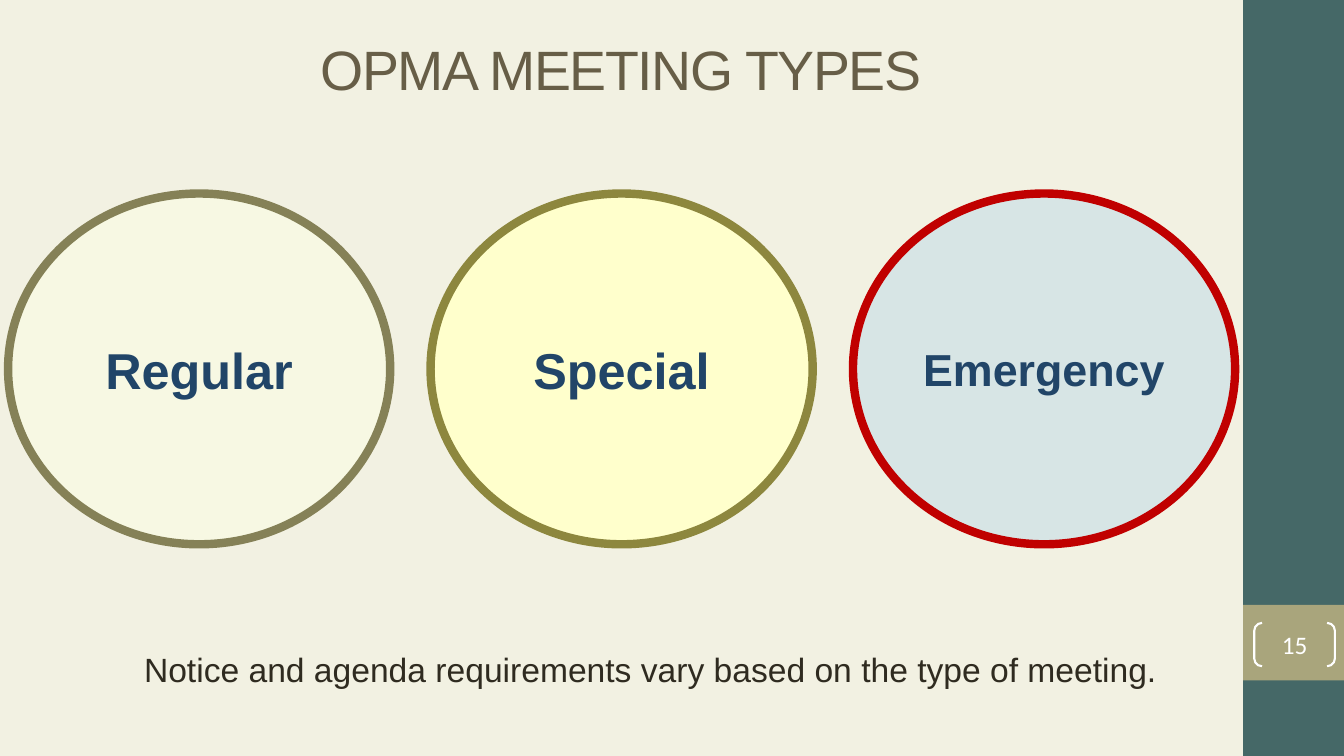
"""Build the slide on OPMA meeting types."""
from dataclasses import dataclass
from typing import Optional

from pptx import Presentation
from pptx import util as u
from pptx.dml.color import RGBColor
from pptx.enum import shapes, text

CREAM = RGBColor(0xF2, 0xF1, 0xE2)
TEAL = RGBColor(0x45, 0x68, 0x67)
KHAKI = RGBColor(0xA9, 0xA5, 0x7C)
BROWN = RGBColor(0x67, 0x5E, 0x47)
INK = RGBColor(0x2F, 0x2B, 0x20)
NAVY = RGBColor(0x21, 0x45, 0x68)
WHITE = RGBColor(0xFF, 0xFF, 0xFF)
IVORY = RGBColor(0xF7, 0xF8, 0xE3)
YELLOW = RGBColor(0xFF, 0xFF, 0xCC)
PALE_BLUE = RGBColor(0xD7, 0xE5, 0xE5)
TAUPE = RGBColor(0x85, 0x81, 0x57)
OLIVE = RGBColor(0x8D, 0x87, 0x3E)
RED = RGBColor(0xC0, 0x00, 0x00)

SIDEBAR_LEFT, SIDEBAR_WIDTH = 12.33, 1
CIRCLE_LEFT, CIRCLE_TOP, CIRCLE_PITCH = 0.08, 1.92, 4.19
CIRCLE_WIDTH, CIRCLE_HEIGHT = 3.79, 3.48


@dataclass(frozen=True)
class Box:
    left: float
    top: float
    width: float
    height: float

    def lengths(self) -> list:
        return [u.Inches(value) for value in (self.left, self.top, self.width, self.height)]


@dataclass(frozen=True)
class Label:
    words: str
    size: float
    color: RGBColor
    font: str = "Arial"
    bold: bool = False
    align: text.PP_ALIGN = text.PP_ALIGN.CENTER
    anchor: text.MSO_ANCHOR = text.MSO_ANCHOR.MIDDLE
    wrap: bool = True


@dataclass(frozen=True)
class Meeting:
    name: str
    size: float
    fill: RGBColor
    outline: RGBColor


MEETINGS = [
    Meeting("Regular", 36, IVORY, TAUPE),
    Meeting("Special", 36, YELLOW, OLIVE),
    Meeting("Emergency", 32, PALE_BLUE, RED),
]


def write(shape, label: Label):
    """Put a formatted label in a shape and return its run."""
    frame = shape.text_frame
    frame.word_wrap = label.wrap
    frame.vertical_anchor = label.anchor
    paragraph = frame.paragraphs[0]
    paragraph.alignment = label.align
    run = paragraph.add_run()
    run.text = label.words
    run.font.color.rgb = label.color
    formats = {"name": label.font, "size": u.Pt(label.size), "bold": label.bold}
    for name, value in formats.items():
        setattr(run.font, name, value)
    return run


def add_shape(slide, kind: shapes.MSO_SHAPE, box: Box, fill: Optional[RGBColor] = None,
              outline: Optional[RGBColor] = None, weight: float = 0):
    """Draw a preset shape without shadow."""
    shape = slide.shapes.add_shape(kind, *box.lengths())
    shape.shadow.inherit = False
    if fill is None:
        shape.fill.background()
    else:
        shape.fill.solid()
        shape.fill.fore_color.rgb = fill
    if outline is None:
        shape.line.fill.background()
    else:
        shape.line.color.rgb = outline
        shape.line.width = u.Pt(weight)
    return shape


def add_text(slide, box: Box, label: Label):
    """Add a text box and return its run."""
    return write(slide.shapes.add_textbox(*box.lengths()), label)


def add_sidebar(slide) -> None:
    """Draw the side band with the bracketed slide number."""
    for top, height, fill in ((0, 7.5, TEAL), (6, 0.75, KHAKI)):
        band = Box(SIDEBAR_LEFT, top, SIDEBAR_WIDTH, height)
        add_shape(slide, shapes.MSO_SHAPE.RECTANGLE, band, fill)
    bracket = add_shape(slide, shapes.MSO_SHAPE.DOUBLE_BRACKET, Box(12.44, 6.18, 0.8, 0.43),
                        outline=WHITE, weight=1.5)
    bracket.adjustments[0] = 0.18
    for side in ("left", "top", "right", "bottom"):
        setattr(bracket.text_frame, f"margin_{side}", 0)
    write(bracket, Label("15", 18, WHITE, font="Calibri"))


def add_meetings(slide) -> None:
    """Draw one evenly spaced ellipse per meeting type."""
    for index, meeting in enumerate(MEETINGS):
        box = Box(CIRCLE_LEFT + index * CIRCLE_PITCH, CIRCLE_TOP, CIRCLE_WIDTH, CIRCLE_HEIGHT)
        circle = add_shape(slide, shapes.MSO_SHAPE.OVAL, box, meeting.fill, meeting.outline, 6)
        write(circle, Label(meeting.name, meeting.size, NAVY, bold=True))


def main() -> None:
    """Build and save the presentation."""
    presentation = Presentation()
    presentation.slide_width = u.Inches(13.33)
    presentation.slide_height = u.Inches(7.5)
    slide = presentation.slides.add_slide(presentation.slide_layouts[6])
    slide.background.fill.solid()
    slide.background.fill.fore_color.rgb = CREAM

    add_sidebar(slide)
    title = add_text(slide, Box(2.12, 0.29, 8.08, 0.77), Label("OPMA MEETING TYPES", 39.6, BROWN))
    title.font._element.set("spc", "-100")
    add_meetings(slide)
    add_text(slide, Box(1.33, 6.39, 10.35, 0.5),
             Label("Notice and agenda requirements vary based on the type of meeting.", 24, INK,
                   align=text.PP_ALIGN.LEFT, anchor=text.MSO_ANCHOR.TOP, wrap=False))
    presentation.save("out.pptx")


if __name__ == "__main__":
    main()
